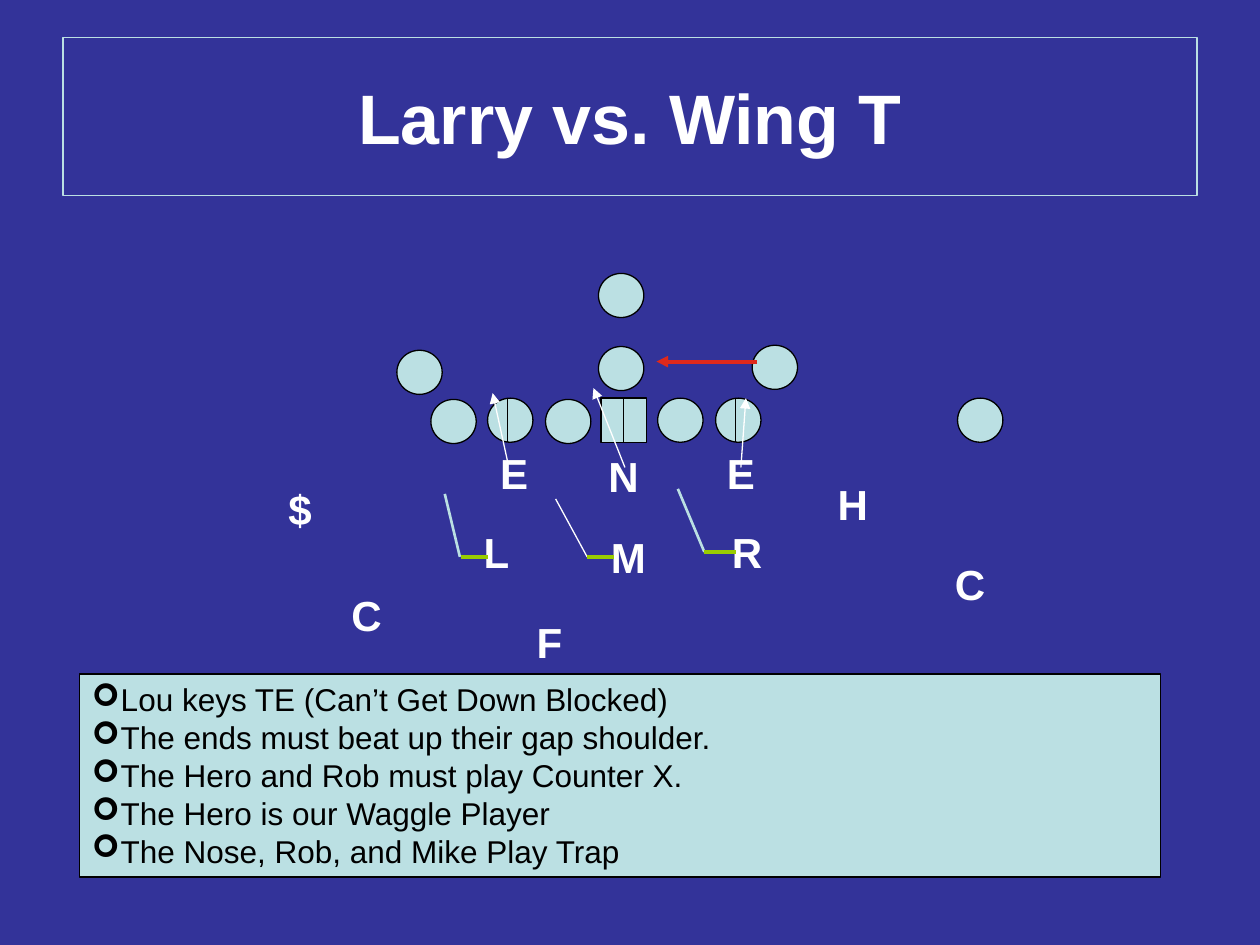
from dataclasses import dataclass
from typing import NamedTuple

from lxml import etree
from pptx import Presentation
from pptx.dml.color import RGBColor
from pptx.enum.shapes import MSO_CONNECTOR, MSO_SHAPE
from pptx.enum.text import MSO_ANCHOR, PP_ALIGN
from pptx.oxml.ns import qn
from pptx.util import Inches, Pt

RECT, OVAL = MSO_SHAPE.RECTANGLE, MSO_SHAPE.OVAL
STRAIGHT = MSO_CONNECTOR.STRAIGHT
LEFT, CENTER = PP_ALIGN.LEFT, PP_ALIGN.CENTER
TOP, MIDDLE = MSO_ANCHOR.TOP, MSO_ANCHOR.MIDDLE


@dataclass(frozen=True)
class Theme:
    font: str = "Arial"
    field: str = "333399"
    pale: str = "BBE0E3"
    white: str = "FFFFFF"
    black: str = "000000"
    red: str = "DF291B"
    green: str = "99CC00"
    title: float = 40
    label: float = 24
    body: float = 18
    thin: float = 0.75
    mid: float = 1.5
    thick: float = 2.25


class Box(NamedTuple):
    left: float
    top: float
    width: float
    height: float


class Mark(NamedTuple):
    text: str
    left: float
    top: float


class Line(NamedTuple):
    start: tuple[float, float]
    end: tuple[float, float]
    color: str
    width: float
    arrow: bool = False


THEME = Theme()
SPOT = (0.36, 0.35)
LABEL = (0.45, 0.5)
HANG = 0.23

CENTER_SPOT = (4.77, 3.16)
OFFENSE = [
    (5.22, 3.16), (5.68, 3.16), (4.33, 3.17), (3.87, 3.16), (3.42, 3.17),
    (3.15, 2.78), (4.75, 2.17), (4.75, 2.75), (5.97, 2.74), (7.6, 3.16),
]
DEFENSE = [
    Mark("E", 3.87, 3.5), Mark("N", 4.73, 3.53), Mark("E", 5.67, 3.5),
    Mark("L", 3.74, 4.13), Mark("M", 4.75, 4.17), Mark("R", 5.71, 4.13),
    Mark("$", 2.19, 3.79), Mark("H", 6.55, 3.75), Mark("F", 4.16, 4.84),
    Mark("C", 2.69, 4.63), Mark("C", 7.48, 4.38),
]
SPLITS = [
    Line((x, 3.16), (x, 3.51), THEME.black, THEME.thin)
    for x in (4.03, 4.95, 5.84)
]
RUSHES = [
    Line(start, end, THEME.white, THEME.thin, True)
    for start, end in (
        ((4.03, 3.67), (3.91, 3.12)),
        ((4.96, 3.71), (4.71, 3.08)),
        ((5.88, 3.71), (5.92, 3.16)),
    )
]
FILLS = [
    Line((3.65, 4.42), (3.53, 3.92), THEME.pale, THEME.mid),
    Line((4.66, 4.42), (4.41, 3.96), THEME.white, THEME.thin),
    Line((5.59, 4.38), (5.38, 3.88), THEME.pale, THEME.mid),
]
MOTION = Line((6.01, 2.87), (5.21, 2.87), THEME.red, THEME.thick, True)
STEPS = [
    Line((right, y), (left, y), THEME.green, THEME.thick)
    for left, right, y in (
        (3.66, 3.87, 4.42), (4.66, 4.87, 4.42), (5.59, 5.84, 4.38),
    )
]
NOTES = [
    "Lou keys TE (Can’t Get Down Blocked)",
    "The ends must beat up their gap shoulder.",
    "The Hero and Rob must play Counter X.",
    "The Hero is our Waggle Player",
    "The Nose, Rob, and Mike Play Trap",
]


def rgb(color: str) -> RGBColor:
    return RGBColor.from_string(color)


def inches(box: Box) -> list[Inches]:
    return [Inches(side) for side in box]


def add_panel(slide, kind, box: Box, fill: str, edge: str):
    """Add a filled, outlined shape without a shadow."""
    shape = slide.shapes.add_shape(kind, *inches(box))
    shape.shadow.inherit = False
    shape.fill.solid()
    shape.fill.fore_color.rgb = rgb(fill)
    shape.line.color.rgb = rgb(edge)
    shape.line.width = Pt(THEME.thin)
    return shape


def add_run(para, text: str, size: float, color: str, bold: bool) -> None:
    run = para.add_run()
    run.text = text
    run.font.name = THEME.font
    run.font.size = Pt(size)
    run.font.bold = bold
    run.font.color.rgb = rgb(color)


def set_bullet(para) -> None:
    props = para._p.get_or_add_pPr()
    props.set("marL", str(Inches(HANG)))
    props.set("indent", str(-Inches(HANG)))
    etree.SubElement(props, qn("a:buFont"), typeface="Wingdings")
    etree.SubElement(props, qn("a:buChar"), char="➢")


def add_title(slide, text: str) -> None:
    shape = add_panel(slide, RECT, Box(0.5, 0.3, 9, 1.25),
                      THEME.field, THEME.pale)
    frame = shape.text_frame
    frame.word_wrap = True
    frame.vertical_anchor = MIDDLE
    para = frame.paragraphs[0]
    para.alignment = CENTER
    add_run(para, text, THEME.title, THEME.white, True)


def add_notes(slide, notes: list[str]) -> None:
    shape = add_panel(slide, RECT, Box(0.63, 5.35, 8.58, 1.61),
                      THEME.pale, THEME.black)
    frame = shape.text_frame
    frame.word_wrap = True
    frame.vertical_anchor = TOP
    for i, note in enumerate(notes):
        para = frame.add_paragraph() if i else frame.paragraphs[0]
        para.alignment = LEFT
        set_bullet(para)
        add_run(para, note, THEME.body, THEME.black, False)


def add_mark(slide, mark: Mark) -> None:
    box = Box(mark.left, mark.top, *LABEL)
    frame = slide.shapes.add_textbox(*inches(box)).text_frame
    frame.word_wrap = True
    add_run(frame.paragraphs[0], mark.text, THEME.label, THEME.white, True)


def add_line(slide, line: Line) -> None:
    ends = [Inches(n) for n in (*line.start, *line.end)]
    shape = slide.shapes.add_connector(STRAIGHT, *ends)
    shape.line.color.rgb = rgb(line.color)
    shape.line.width = Pt(line.width)
    if line.arrow:
        etree.SubElement(shape.line._get_or_add_ln(), qn("a:tailEnd"),
                         type="triangle")
    etree.SubElement(shape._element.spPr, qn("a:effectLst"))


def main() -> None:
    deck = Presentation()
    deck.slide_width, deck.slide_height = Inches(10), Inches(7.5)
    slide = deck.slides.add_slide(deck.slide_layouts[6])
    slide.background.fill.solid()
    slide.background.fill.fore_color.rgb = rgb(THEME.field)

    add_panel(slide, RECT, Box(*CENTER_SPOT, *SPOT), THEME.pale, THEME.black)
    for spot in OFFENSE:
        add_panel(slide, OVAL, Box(*spot, *SPOT), THEME.pale, THEME.black)
    for mark in DEFENSE:
        add_mark(slide, mark)
    add_title(slide, "Larry vs. Wing T")
    add_notes(slide, NOTES)
    for line in (*SPLITS, *RUSHES, *FILLS, MOTION, *STEPS):
        add_line(slide, line)
    deck.save("out.pptx")


if __name__ == "__main__":
    main()
